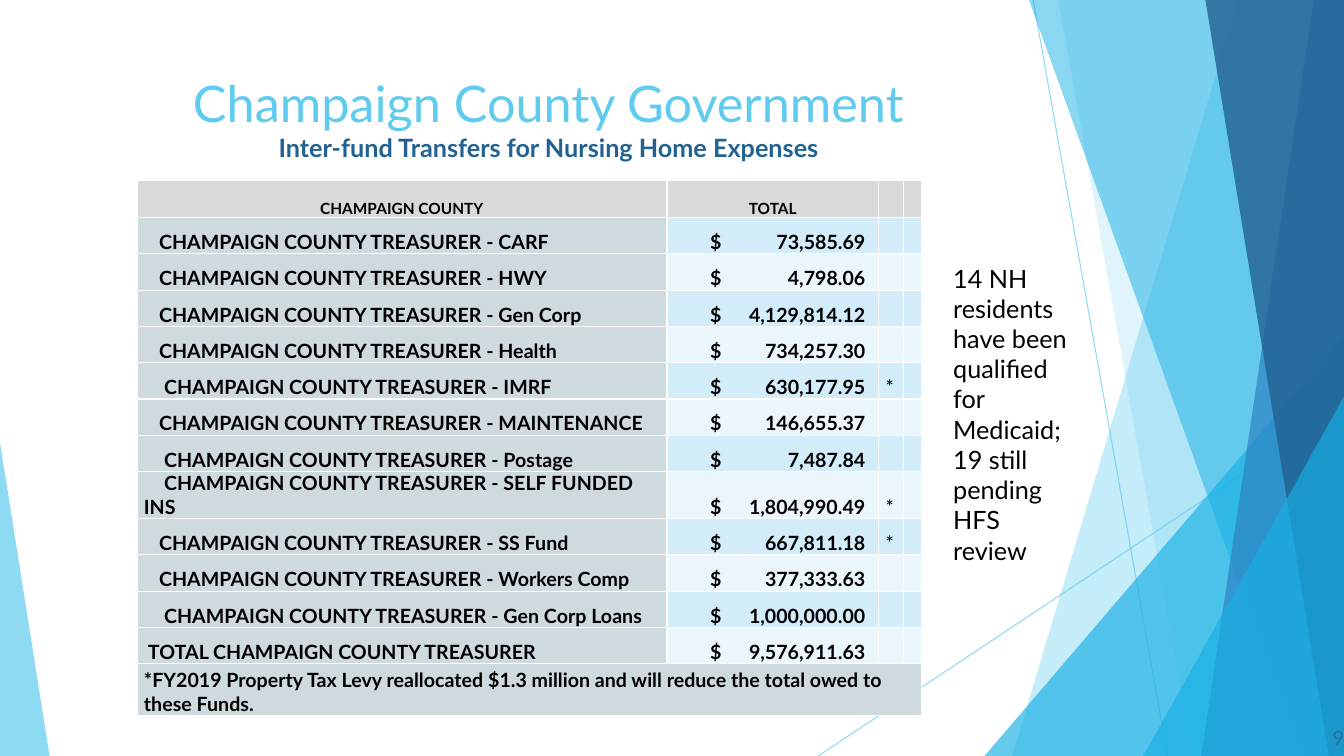
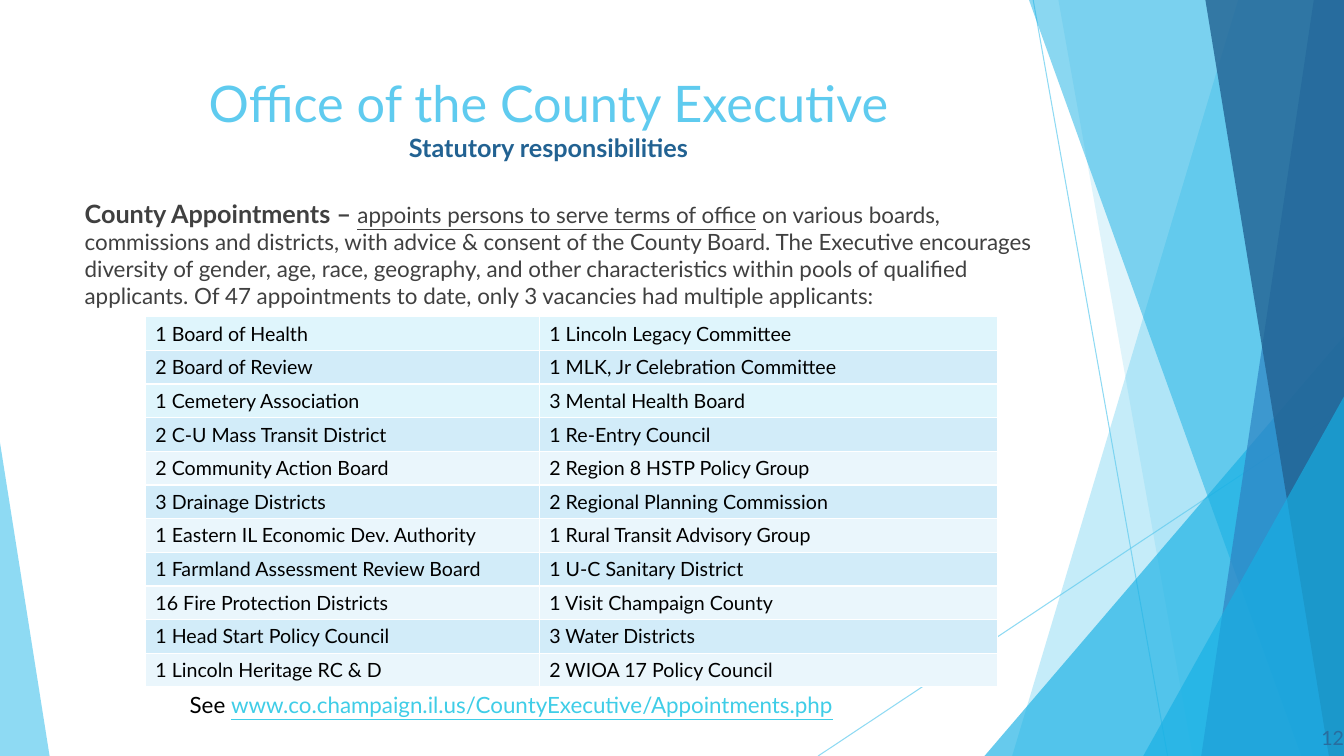
import pptx
import pptx.util
import pptx.dml.color
import pptx.enum.shapes
import pptx.enum.text
import pptx.oxml
import pptx.oxml.ns
from dataclasses import dataclass

ALIGN = pptx.enum.text.PP_ALIGN
ANCHOR = pptx.enum.text.MSO_ANCHOR
KIND = pptx.enum.shapes.MSO_SHAPE


@dataclass(frozen=True)
class Theme:
    """Colours and type sizes."""
    font: str = "Lato"
    sky: str = "5FCBEF"
    cyan: str = "17B0E4"
    blue: str = "2E83C3"
    navy: str = "226292"
    page: str = "286D9F"
    link: str = "3FCDE7"
    ink: str = "000000"
    gray: str = "404040"
    head: str = "D9D9D9"
    label: str = "CFDADF"
    band: str = "D2ECF9"
    pale: str = "EAF6FC"
    aqua: str = "DFF5FC"
    title: int = 36
    lead: int = 18
    text: int = 16
    cell: int = 14
    small: int = 11


T = Theme()
COLS, ROWS = 160, 90  # grid over the whole slide
WIDE, HIGH = pptx.util.Inches(13.33), pptx.util.Inches(7.5)

# Facets: top x, foot x, colour, opacity; each runs to the right edge
BACK = [(147.4, 120.5, T.sky, 36), (126, 142, T.sky, 20)]
FRONT = [(122.5, 154.9, T.cyan, 50), (156.4, 143, T.blue, 70),
         (143.5, 158.2, T.navy, 80)]


def x(cols):
    return round(WIDE * cols / COLS)


def y(rows):
    return round(HIGH * rows / ROWS)


def rgb(code):
    return pptx.dml.color.RGBColor.from_string(code)


def fade(shape, share):
    """Set the opacity of the first colour, in percent."""
    color = shape.element.find(".//" + pptx.oxml.ns.qn("a:srgbClr"))
    alpha = color.makeelement(pptx.oxml.ns.qn("a:alpha"), {"val": str(share * 1000)})
    color.append(alpha)


def style(font, size=None, color=None, bold=None, line=None):
    if size:
        font.size = pptx.util.Pt(size)
    if color:
        font.color.rgb = rgb(color)
    if bold is not None:
        font.bold = bold
    if line:
        font.underline = True


class Deck:
    """Holds the file, the current slide and the house style."""

    def __init__(self):
        self.file = pptx.Presentation()
        self.file.slide_width, self.file.slide_height = WIDE, HIGH

    def start(self, title, sub, page):
        self.slide = self.file.slides.add_slide(self.file.slide_layouts[5])
        self.shapes = self.slide.shapes
        self.decor()
        self.title(title, sub)
        self.text((152.2, 85.4, 7.8, 4.8), str(page), T.cell, T.page,
                  align=ALIGN.RIGHT, anchor=ANCHOR.MIDDLE, right=0)

    # Background art
    def decor(self):
        self.line((123, 0), (139, 90))
        self.line((160, 48.4), (97.4, 90))
        for facet in BACK:
            self.facet(*facet)
        self.wedge((117.2, 40, 42.8, 50), 1, T.cyan, 66)
        for facet in FRONT:
            self.facet(*facet)
        self.wedge((136.1, 47.2, 23.9, 42.8), 1, T.cyan, 66)
        self.wedge((0, 52.7, 5.9, 37.3), 0, T.sky, 70)

    def line(self, start, end):
        line = self.shapes.add_connector(
            pptx.enum.shapes.MSO_CONNECTOR.STRAIGHT,
            x(start[0]), y(start[1]), x(end[0]), y(end[1]))
        line.line.color.rgb = rgb(T.sky)
        line.line.width = pptx.util.Pt(0.75)
        fade(line, 70)
        props = line.element.spPr
        props.append(props.makeelement(pptx.oxml.ns.qn("a:effectLst"), {}))

    def paint(self, shape, color, share):
        shape.shadow.inherit = False
        shape.fill.solid()
        shape.fill.fore_color.rgb = rgb(color)
        shape.line.fill.background()
        fade(shape, share)

    def facet(self, top, foot, color, share):
        form = self.shapes.build_freeform(x(top), 0)
        form.add_line_segments([(x(COLS), 0), (x(COLS), y(ROWS)), (x(foot), y(ROWS))])
        self.paint(form.convert_to_shape(), color, share)

    def wedge(self, box, tip, color, share):
        shape = self.shapes.add_shape(KIND.ISOSCELES_TRIANGLE, *self.place(box))
        shape.adjustments[0] = tip
        self.paint(shape, color, share)

    def place(self, box):
        left, top, wide, high = box
        return x(left), y(top), x(wide), y(high)

    # Text
    def fill(self, para, parts, size, color, bold=False, align=ALIGN.LEFT):
        """Parts is a string, or pairs of text and what differs."""
        para.alignment = align
        para.font.name = T.font
        style(para.font, size, color, bold)
        for words, extra in [(parts, {})] if isinstance(parts, str) else parts:
            run = para.add_run()
            run.text = words
            style(run.font, **extra)

    def title(self, main, sub):
        title = self.shapes.title
        title.left, title.top, title.width, title.height = self.place((8.9, 8, 112.8, 17.3))
        frame = title.text_frame
        frame.auto_size = pptx.enum.text.MSO_AUTO_SIZE.NONE
        frame.vertical_anchor = ANCHOR.TOP
        para = frame.paragraphs[0]
        self.fill(para, main, T.title, T.sky, align=ALIGN.CENTER)
        para.add_line_break()
        run = para.add_run()
        run.text = sub
        style(run.font, T.lead, T.navy, True)

    def text(self, box, parts, size, color, align=ALIGN.LEFT,
             anchor=ANCHOR.TOP, right=None):
        frame = self.shapes.add_textbox(*self.place(box)).text_frame
        frame.word_wrap = True
        frame.vertical_anchor = anchor
        if right is not None:
            frame.margin_right = right
        self.fill(frame.paragraphs[0], parts, size, color, align=align)

    # Tables
    def table(self, left, top, cols, rows):
        box = self.place((left, top, sum(cols), sum(rows)))
        table = self.shapes.add_table(len(rows), len(cols), *box).table
        table.horz_banding = False
        for col, wide in zip(table.columns, cols):
            col.width = x(wide)
        for row, high in zip(table.rows, rows):
            row.height = y(high)
        return table

    def cell(self, cell, words, back, size=T.cell, bold=False,
             align=ALIGN.LEFT, tight=False):
        cell.fill.solid()
        cell.fill.fore_color.rgb = rgb(back)
        if tight:
            cell.margin_left = cell.margin_right = pptx.util.Inches(0.07)
            cell.margin_top = cell.margin_bottom = 0
            cell.vertical_anchor = ANCHOR.BOTTOM
        para = cell.text_frame.paragraphs[0]
        self.fill(para, words, size, T.ink, bold, align)
        return para


def indent(para, inches):
    """Indent the first line only."""
    props = para._p.get_or_add_pPr()
    props.set("marL", "0")
    props.set("indent", str(pptx.util.Inches(inches)))


def tabs(para, stops):
    """Add tab stops as pairs of inches and alignment."""
    props = para._p.get_or_add_pPr()
    items = "".join(f'<a:tab pos="{pptx.util.Inches(pos)}" algn="{side}"/>'
                    for pos, side in stops)
    xml = f'<a:tabLst {pptx.oxml.ns.nsdecls("a")}>{items}</a:tabLst>'
    props.insert(0, pptx.oxml.parse_xml(xml))


# Fund, amount, mark, first-line indent
FUNDS = [
    ("CARF", "73,585.69", "", 0.15),
    ("HWY", "4,798.06", "", 0.15),
    ("Gen Corp", "4,129,814.12", "", 0.15),
    ("Health", "734,257.30", "", 0.15),
    ("IMRF", "630,177.95", "*", 0.2),
    ("MAINTENANCE", "146,655.37", "", 0.15),
    ("Postage", "7,487.84", "", 0.2),
    ("SELF FUNDED INS", "1,804,990.49", "*", 0.2),
    ("SS Fund", "667,811.18", "*", 0.15),
    ("Workers Comp", "377,333.63", "", 0.15),
    ("Gen Corp Loans", "1,000,000.00", "", 0.2),
    ("", "9,576,911.63", "", 0.04),
]

BOARDS = [
    ("1 Board of Health", "1 Lincoln Legacy Committee"),
    ("2 Board of Review", "1 MLK, Jr Celebration Committee"),
    ("1 Cemetery Association", "3 Mental Health Board"),
    ("2 C-U Mass Transit District", "1 Re-Entry Council"),
    ("2 Community Action Board", "2 Region 8 HSTP Policy Group"),
    ("3 Drainage Districts", "2 Regional Planning Commission"),
    ("1 Eastern IL Economic Dev. Authority", "1 Rural Transit Advisory Group"),
    ("1 Farmland Assessment Review Board", "1 U-C Sanitary District"),
    ("16 Fire Protection Districts", "1 Visit Champaign County"),
    ("1 Head Start Policy Council", "3 Water Districts"),
    ("1 Lincoln Heritage RC & D", "2 WIOA 17 Policy Council"),
]


def funds(deck):
    deck.start("Champaign County Government",
               "Inter-fund Transfers for Nursing Home Expenses", 9)
    rows = [4.4] + [4.32] * len(FUNDS) + [6.2]
    table = deck.table(16.3, 21.5, [63.1, 25.2, 3, 1.7], rows)
    for col, words in enumerate(("CHAMPAIGN COUNTY", "TOTAL", "", "")):
        deck.cell(table.cell(0, col), words, T.head, T.small, True, ALIGN.CENTER, True)
    for row, (fund, total, mark, inset) in enumerate(FUNDS, 1):
        back = T.band if row % 2 else T.pale
        name = "CHAMPAIGN COUNTY TREASURER"
        name = f"{name} - {fund}" if fund else f"TOTAL {name}"
        para = deck.cell(table.cell(row, 0), name, T.label, bold=True, tight=True)
        indent(para, inset)
        para = deck.cell(table.cell(row, 1), f"\t$\t{total}", back, bold=True, tight=True)
        tabs(para, [(0.36, "l"), (1.9, "r")])
        for col, words in ((2, mark), (3, "")):
            deck.cell(table.cell(row, col), words, back, tight=True)
    last = len(rows) - 1
    table.cell(last, 0).merge(table.cell(last, 3))
    deck.cell(table.cell(last, 0),
              "*FY2019 Property Tax Levy reallocated $1.3 million and will reduce "
              "the total owed to these Funds.", T.label, bold=True, tight=True)
    deck.text((112.3, 30.7, 16, 41.2),
              "14 NH residents have been qualified for Medicaid; "
              "19 still pending HFS review", T.lead, T.ink)


def boards(deck):
    deck.start("Office of the County Executive", "Statutory responsibilities", 12)
    deck.text((8.9, 23, 116, 15), [
        ("County Appointments – ", {"size": T.lead, "bold": True}),
        ("appoints persons to serve terms of office", {"line": True}),
        (" on various boards, commissions and districts, with advice & consent of "
         "the County Board. The Executive encourages diversity of gender, age, race, "
         "geography, and other characteristics within pools of qualified applicants. "
         "Of 47 appointments to date, only 3 vacancies had multiple applicants:", {}),
    ], T.text, T.gray)
    table = deck.table(17.3, 37.7, [46.9, 54.6], [4] * len(BOARDS))
    for row, names in enumerate(BOARDS):
        back = T.band if row % 2 else T.aqua if row < 4 else T.pale
        for col, name in enumerate(names):
            deck.cell(table.cell(row, col), name, back)
    deck.text((21.4, 81.7, 85.7, 4.4), [
        ("See ", {}),
        ("www.co.champaign.il.us/CountyExecutive/Appointments.php",
         {"color": T.link, "line": True}),
    ], T.text, T.ink)


def main():
    deck = Deck()
    funds(deck)
    boards(deck)
    deck.file.save("out.pptx")


if __name__ == "__main__":
    main()
